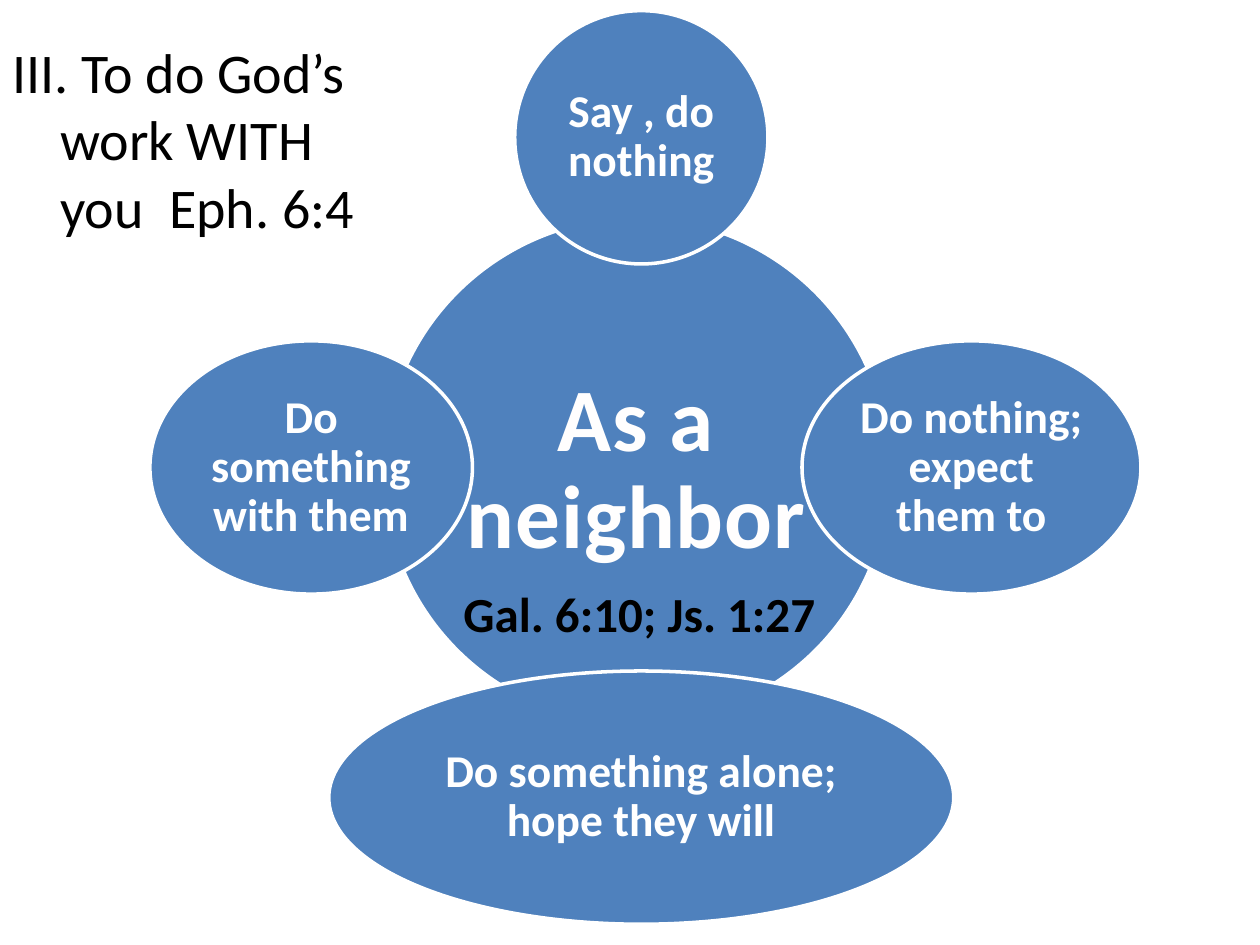
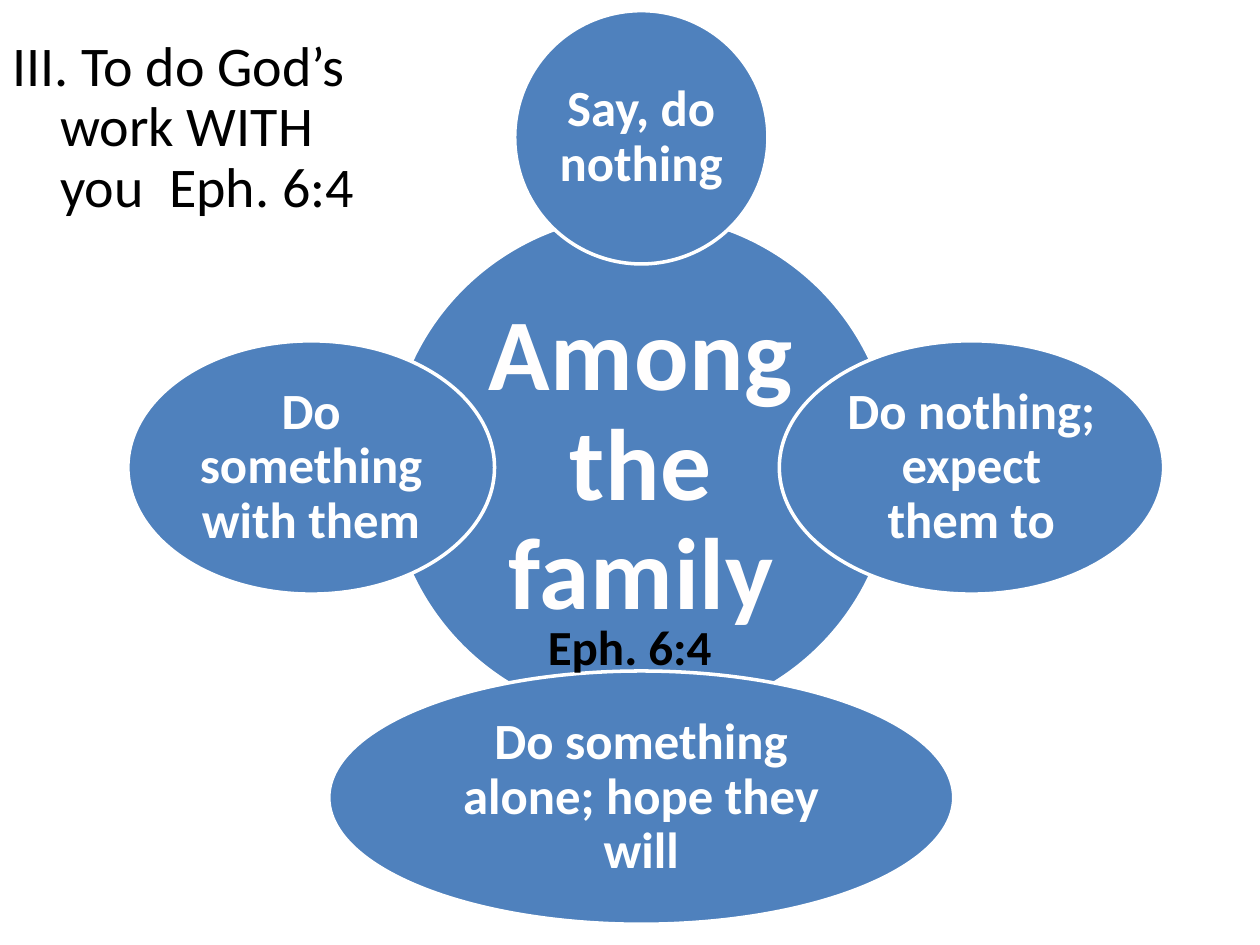
from lxml.etree import SubElement
from pptx import Presentation
from pptx.dml.color import RGBColor
from pptx.enum.shapes import MSO_SHAPE
from pptx.enum.text import MSO_ANCHOR, PP_ALIGN
from pptx.oxml import parse_xml
from pptx.oxml.ns import nsdecls, qn
from pptx.util import Inches, Pt

FONT = "Calibri"
BLUE, WHITE, BLACK, ORANGE = "4F81BD", "FFFFFF", "000000", "E78738"
HUB_TEXT = "FFFEFE"
HEADING = "III. To do God’s work WITH you  Eph. 6:4"
HEADING_BOX = (0, 0.25, 3, 1.67)
CENTER_X, CENTER_Y = 5.09, 3.71
ORBIT = 2.62
HUB_SIZE, BUBBLE_HEIGHT = 4.02, 2.01
INSET_PER_POINT = 0.0014

SLIDES = [
    {
        "hub": "As a neighbor", "hub_size": 51, "hub_center": (5.05, 3.74),
        "bubble_size": 26, "heading_spacing": 1.0,
        "bubbles": [
            ("Say , do nothing", 0, -1, 2.01),
            ("Do nothing; expect them to", 1, 0, 2.69),
            ("Do something alone; hope they will", 0, 1, 4.96),
            ("Do something with them", -1, 0, 2.56),
        ],
        "verse": "Gal. 6:10; Js. 1:27", "verse_box": (3.58, 4.58, 3.25, 0.57),
    },
    {
        "hub": "Among the family", "hub_size": 58,
        "hub_center": (CENTER_X, CENTER_Y),
        "bubble_size": 29, "heading_spacing": 0.9,
        "bubbles": [
            ("Say, do nothing", 0, -1, 2.01),
            ("Do nothing; expect them to", 1, 0, 3.05),
            ("Do something alone; hope they will", 0, 1, 4.96),
            ("Do something with them", -1, 0, 2.91),
        ],
        "verse": "Eph. 6:4", "verse_box": (4.25, 4.84, 2, 0.57),
    },
]


def rgb(value):
    """Turn a hex string into a colour."""
    return RGBColor.from_string(value)


def write(sp, text, size, color=BLACK, bold=False, align=PP_ALIGN.LEFT,
          spacing=None, anchor=MSO_ANCHOR.TOP, inset=None):
    """Write one formatted paragraph in a shape and return it with its run."""
    tf = sp.text_frame
    tf.word_wrap = True
    tf.vertical_anchor = anchor
    if inset is not None:
        tf.margin_left = tf.margin_right = Inches(inset)
        tf.margin_top = tf.margin_bottom = Inches(inset)
    p = tf.paragraphs[0]
    p.alignment = align
    p.line_spacing = spacing
    r = p.add_run()
    r.text = text
    r.font.name, r.font.size, r.font.bold = FONT, Pt(size), bold
    r.font.color.rgb = rgb(color)
    return p, r


def text_box(s, box, text, **style):
    """Add a text box and return its paragraph and run."""
    return write(s.shapes.add_textbox(*map(Inches, box)), text, **style)


def heading(s, box, spacing):
    """Add the hanging heading at the top left."""
    p, _ = text_box(s, box, HEADING, size=32, spacing=spacing)
    p.space_before = Pt(0)
    pPr = p._p.get_or_add_pPr()
    pPr.set("marL", str(Inches(0.38)))
    pPr.set("indent", str(-Inches(0.38)))
    before = pPr.find(qn("a:spcBef"))
    before.clear()
    SubElement(before, qn("a:spcPct"), val="20000")


def ellipse(s, center, width, height, text, size, color=WHITE):
    """Add a white-edged ellipse around a center and return its run."""
    x, y = center
    box = (x - width / 2, y - height / 2, width, height)
    sp = s.shapes.add_shape(MSO_SHAPE.OVAL, *map(Inches, box))
    sp.shadow.inherit = False
    sp.fill.solid()
    sp.fill.fore_color.rgb = rgb(BLUE)
    sp.line.color.rgb = rgb(WHITE)
    sp.line.width = Pt(2)
    _, r = write(sp, text, size, color=color, bold=True, spacing=0.9,
                 align=PP_ALIGN.CENTER, anchor=MSO_ANCHOR.MIDDLE,
                 inset=size * INSET_PER_POINT)
    return r


def decorate(r):
    """Give a run an outline, a soft shadow and wider letter spacing."""
    rPr = r.font._element
    rPr.set("spc", "50")
    rPr.insert(0, parse_xml(
        f'<a:ln {nsdecls("a")} w="12700"><a:solidFill>'
        f'<a:srgbClr val="{ORANGE}"/></a:solidFill></a:ln>'))
    rPr.find(qn("a:solidFill")).addnext(parse_xml(
        f'<a:effectLst {nsdecls("a")}><a:outerShdw blurRad="38100" '
        f'dist="19050" dir="2700000"><a:srgbClr val="{BLACK}">'
        '<a:alpha val="40000"/></a:srgbClr></a:outerShdw></a:effectLst>'))


def diagram(s, content):
    """Draw the hub and the four bubbles in orbit around it."""
    hub = ellipse(s, content["hub_center"], HUB_SIZE, HUB_SIZE,
                  content["hub"], content["hub_size"], color=HUB_TEXT)
    decorate(hub)
    for text, dx, dy, width in content["bubbles"]:
        center = (CENTER_X + dx * ORBIT, CENTER_Y + dy * ORBIT)
        ellipse(s, center, width, BUBBLE_HEIGHT, text, content["bubble_size"])


def build_slide(prs, content):
    """Add one slide with its heading, diagram and verse."""
    s = prs.slides.add_slide(prs.slide_layouts[6])
    heading(s, HEADING_BOX, content["heading_spacing"])
    diagram(s, content)
    text_box(s, content["verse_box"], content["verse"], size=28, bold=True)


def main():
    """Build and save the presentation."""
    prs = Presentation()
    prs.slide_width, prs.slide_height = Inches(10), Inches(7.5)
    for content in SLIDES:
        build_slide(prs, content)
    prs.save("out.pptx")


if __name__ == "__main__":
    main()
